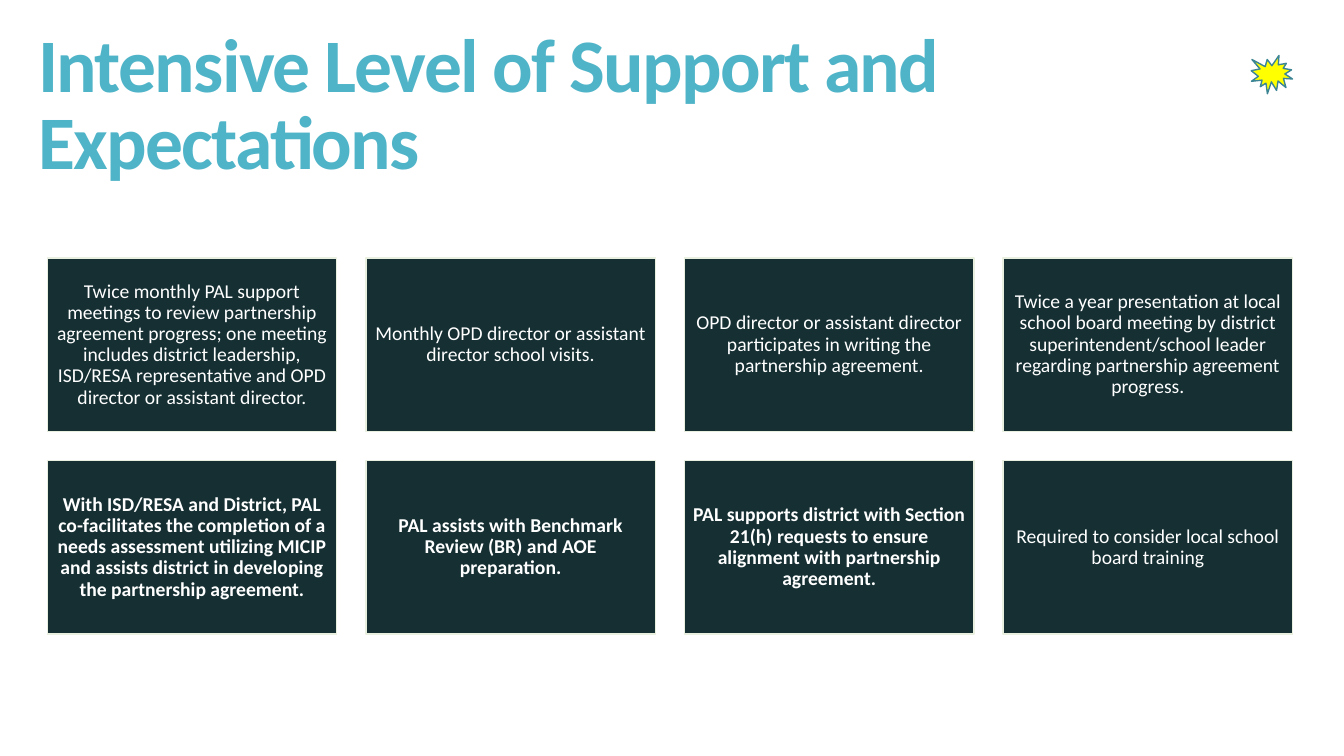
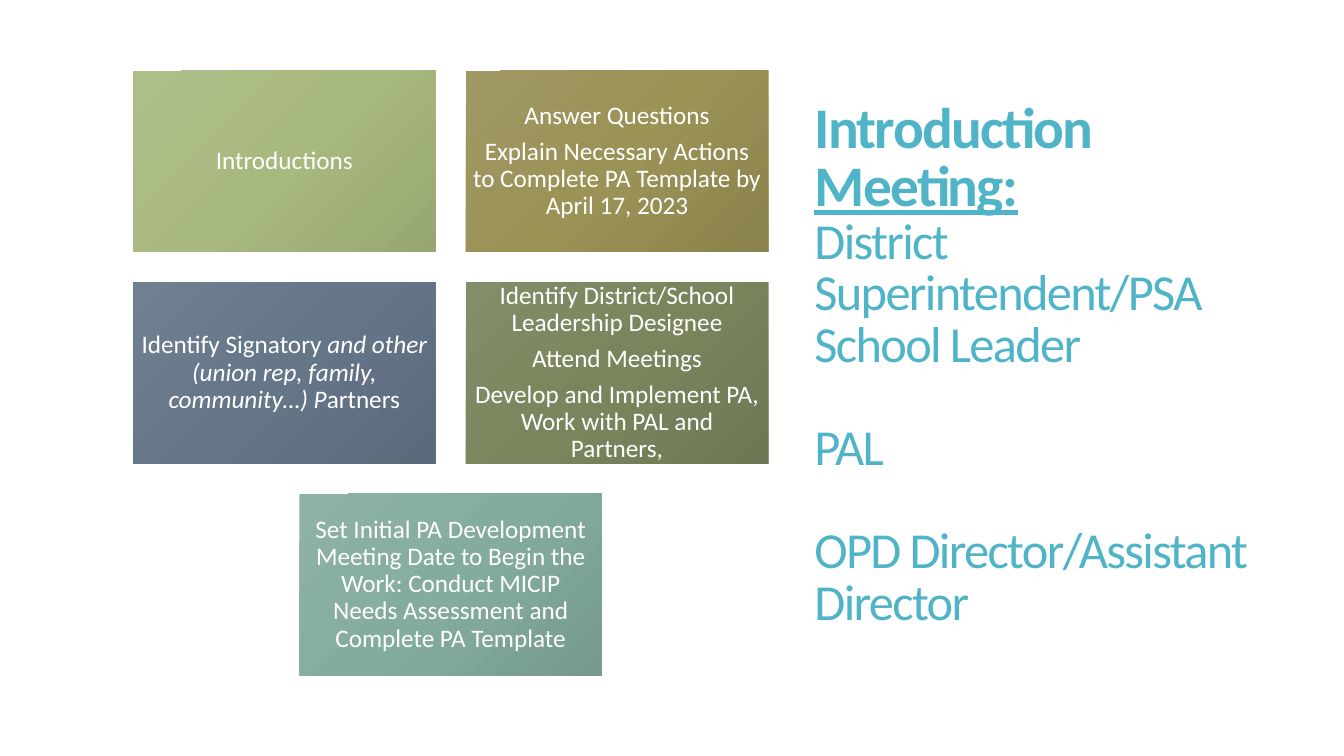
from copy import deepcopy

from pptx import Presentation
from pptx.dml.color import RGBColor
from pptx.enum.shapes import MSO_SHAPE
from pptx.enum.text import MSO_ANCHOR, PP_ALIGN
from pptx.oxml.ns import qn
from pptx.util import Inches, Pt

FONT = "Calibri"
TEAL = RGBColor(0x50, 0xB4, 0xC8)
DARK_TEAL = RGBColor(0x3B, 0x85, 0x94)
INK = RGBColor(0x16, 0x2F, 0x33)
PALE = RGBColor(0xEA, 0xF0, 0xE0)
YELLOW = RGBColor(0xFF, 0xFF, 0x00)
WHITE = RGBColor(0xFF, 0xFF, 0xFF)
GREEN = [RGBColor(0xAE, 0xBE, 0x89), RGBColor(0xA8, 0xB9, 0x7F), RGBColor(0x97, 0xA7, 0x72)]
OCHRE = [RGBColor(0xA1, 0x99, 0x65), RGBColor(0x9B, 0x92, 0x56), RGBColor(0x8B, 0x83, 0x4D)]
SLATE = [RGBColor(0x71, 0x80, 0x91), RGBColor(0x65, 0x76, 0x89), RGBColor(0x5B, 0x6A, 0x7B)]
OLIVE = [RGBColor(0x83, 0x8E, 0x69), RGBColor(0x7A, 0x85, 0x5D), RGBColor(0x6E, 0x77, 0x54)]
SAGE = [RGBColor(0x8E, 0xB2, 0xA4), RGBColor(0x84, 0xAC, 0x9D), RGBColor(0x76, 0x9B, 0x8D)]

BOLD = {"bold": True}
ITALIC = {"italic": True}

SUPPORT_TITLE = [[("Intensive Level of Support and Expectations", BOLD)]]
EXPECTATIONS = [
    [
        ("Twice monthly PAL support meetings to review partnership agreement progress; "
         "one meeting includes district leadership, ISD/RESA representative and OPD "
         "director or assistant director.", {}),
        ("Monthly OPD director or assistant director school visits.", {}),
        ("OPD director or assistant director participates in writing the partnership "
         "agreement.", {}),
        ("Twice a year presentation at local school board meeting by district "
         "superintendent/school leader regarding partnership agreement progress.", {}),
    ],
    [
        ("With ISD/RESA and District, PAL co-facilitates the completion of a needs "
         "assessment utilizing MICIP and assists district in developing the partnership "
         "agreement.", BOLD),
        ("PAL assists with Benchmark Review (BR) and AOE preparation.", BOLD),
        ("PAL supports district with Section 21(h) requests to ensure alignment with "
         "partnership agreement.", BOLD),
        ("Required to consider local school board training", {}),
    ],
]

MEETING_TITLE = [
    [("Introduction ", {"bold": True, "size": Pt(41)}),
     ("Meeting:", {"bold": True, "underline": True, "size": Pt(41)})],
    [("District Superintendent/PSA School Leader", {})],
    [("PAL", {})],
    [("OPD Director/Assistant Director", {})],
]
AGENDA = [
    [
        (GREEN, [[("Introductions", {})]]),
        (OCHRE, [[("Answer Questions", {})],
                 [("Explain Necessary Actions to Complete PA Template by April 17, 2023", {})]]),
    ],
    [
        (SLATE, [[("Identify Signatory ", {}),
                  ("and other (union rep, family, community…) P", ITALIC),
                  ("artners", {})]]),
        (OLIVE, [[("Identify District/School Leadership Designee", {})],
                 [("Attend Meetings", {})],
                 [("Develop and Implement PA, Work with PAL and Partners,", {})]]),
    ],
    [
        (SAGE, [[("Set Initial PA Development Meeting Date to Begin the Work: Conduct "
                  "MICIP Needs Assessment and Complete PA Template", {})]]),
    ],
]


def write_text(shape, paragraphs, size, color=WHITE, align=PP_ALIGN.CENTER,
               line_spacing=0.9, before=(), after=0, tracking=None, inset=None):
    frame = shape.text_frame
    frame.word_wrap = True
    frame.vertical_anchor = MSO_ANCHOR.MIDDLE
    if inset is not None:
        frame.margin_left = frame.margin_right = Inches(inset)
        frame.margin_top = frame.margin_bottom = Inches(inset)
    for index, runs in enumerate(paragraphs):
        paragraph = frame.add_paragraph() if index else frame.paragraphs[0]
        paragraph.alignment = align
        paragraph.line_spacing = line_spacing
        paragraph.space_before = Pt(before[index] if before else 0)
        paragraph.space_after = Pt(after)
        for words, style in runs:
            run = paragraph.add_run()
            run.text = words
            run.font.name = FONT
            run.font.size = Pt(size)
            run.font.color.rgb = color
            for key, value in style.items():
                setattr(run.font, key, value)
            if tracking is not None:
                run.font._element.set("spc", str(round(tracking * 100)))


def add_title(slide, paragraphs, box, size, before=()):
    title = slide.shapes.add_textbox(*map(Inches, box))
    write_text(title, paragraphs, size, color=TEAL, align=PP_ALIGN.LEFT,
               line_spacing=0.85, before=before, tracking=-1.2)


def add_block(slide, box, fill, line=None, outline=MSO_SHAPE.RECTANGLE):
    block = slide.shapes.add_shape(outline, *map(Inches, box))
    block.shadow.inherit = False
    if isinstance(fill, list):
        block.fill.gradient()
        block.fill.gradient_angle = 315
        stops = block._element.spPr.find(qn("a:gradFill")).find(qn("a:gsLst"))
        stops.insert(1, deepcopy(stops[0]))
        for stop, color, position in zip(block.fill.gradient_stops, fill, (0, 0.5, 1)):
            stop.color.rgb = color
            stop.position = position
    else:
        block.fill.solid()
        block.fill.fore_color.rgb = fill
    if line is None:
        block.line.fill.background()
    else:
        block.line.color.rgb = line
        block.line.width = Pt(1)
    return block


def grid_cells(rows, left, top, width, height, gap):
    columns = max(map(len, rows))
    for row_index, row in enumerate(rows):
        indent = (columns - len(row)) * (width + gap) / 2
        for column, content in enumerate(row):
            x = left + indent + column * (width + gap)
            y = top + row_index * (height + gap)
            yield (x, y, width, height), content


def build_support_slide(slide):
    add_title(slide, SUPPORT_TITLE, (0.28, 0.55, 12.87, 1.04), 54)
    for box, expectation in grid_cells(EXPECTATIONS, 0.47, 2.56, 2.87, 1.72, 0.29):
        card = add_block(slide, box, INK, PALE)
        write_text(card, [[expectation]], 14, after=4.9, inset=0.06)
    add_block(slide, (12.41, 0.55, 0.41, 0.38), YELLOW, DARK_TEAL, MSO_SHAPE.EXPLOSION1)


def build_meeting_slide(slide):
    add_title(slide, MEETING_TITLE, (7.98, 0.55, 4.64, 6.16), 36, before=(0, 0, 37, 37))
    for box, (shades, paragraphs) in grid_cells(AGENDA, 1.32, 0.7, 3, 1.8, 0.3):
        card = add_block(slide, box, shades)
        write_text(card, paragraphs, 18, after=6.3, inset=0.07)


def main():
    deck = Presentation()
    deck.slide_width = Inches(13.33)
    deck.slide_height = Inches(7.5)
    for build in (build_support_slide, build_meeting_slide):
        build(deck.slides.add_slide(deck.slide_layouts[6]))
    deck.save("out.pptx")


if __name__ == "__main__":
    main()
